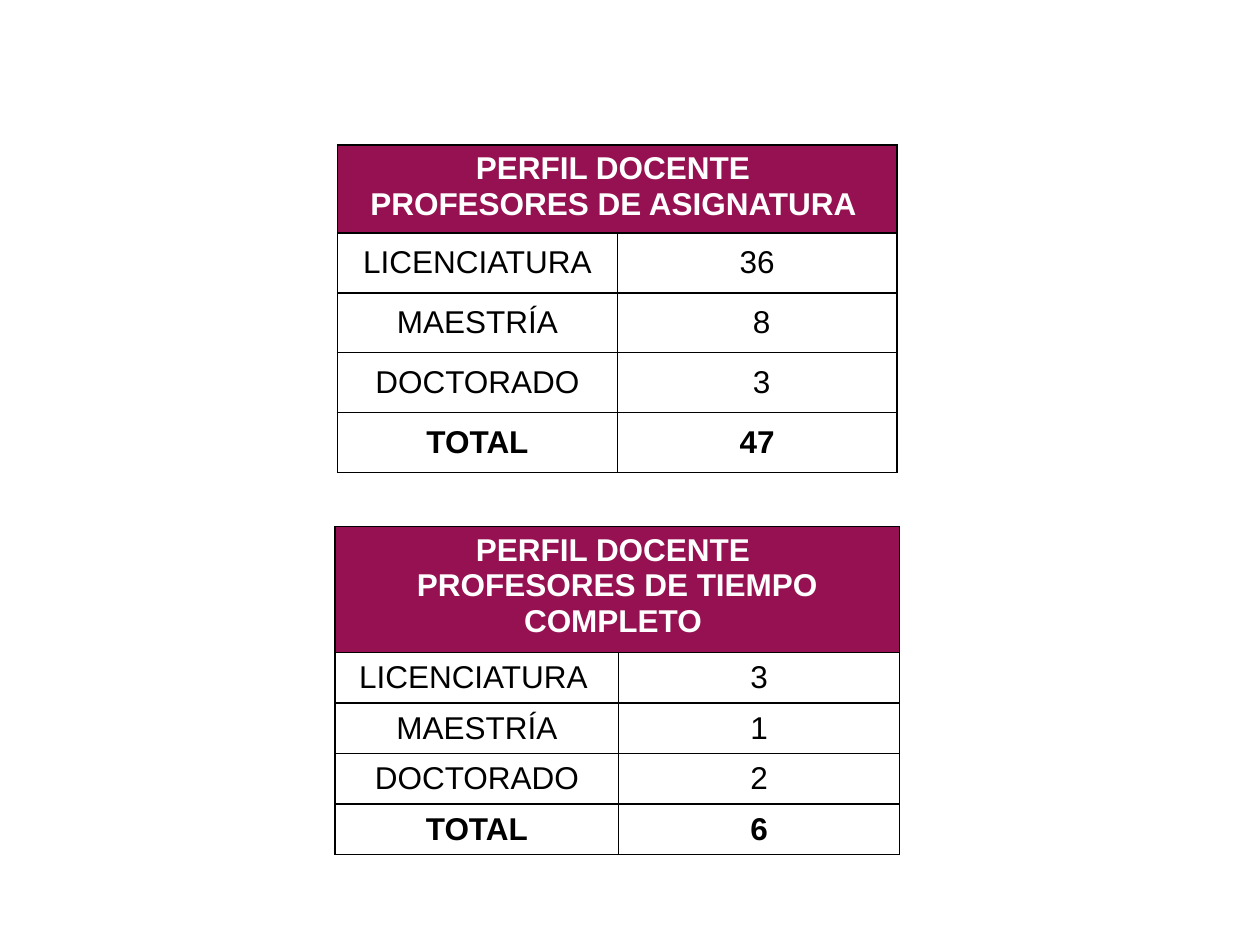
import lxml.etree
import pptx
import pptx.dml.color
import pptx.enum.text
import pptx.oxml.ns
import pptx.util

Inches = pptx.util.Inches

COLORS = {"header": "961151", "body": "FFFFFF", "light": "FFFFFF", "dark": "000000"}

TABLES = [
    {
        "heading": ["PERFIL DOCENTE ", "PROFESORES DE ASIGNATURA "],
        "rows": [("LICENCIATURA", "36"), ("MAESTRÍA", " 8"), ("DOCTORADO", " 3"), ("TOTAL", "47")],
        "left": 2.68, "top": 1.15, "columns": (2.22, 2.22),
        "header_height": 0.7, "row_height": 0.475,
    },
    {
        "heading": ["PERFIL DOCENTE ", "PROFESORES DE TIEMPO COMPLETO "],
        "rows": [("LICENCIATURA ", "3"), ("MAESTRÍA", "1"), ("DOCTORADO", "2"), ("TOTAL", "6")],
        "left": 2.66, "top": 4.18, "columns": (2.25, 2.23),
        "header_height": 1.0, "row_height": 0.4,
    },
]


def rgb(name):
    return pptx.dml.color.RGBColor.from_string(COLORS[name])


def add_borders(cell):
    """Draw a 1 pt line on each side; the lines must precede the fill."""
    properties = cell._tc.get_or_add_tcPr()
    qn = pptx.oxml.ns.qn
    for position, side in enumerate(("a:lnL", "a:lnR", "a:lnT", "a:lnB")):
        line = lxml.etree.Element(qn(side), w=str(pptx.util.Pt(1)))
        fill = lxml.etree.SubElement(line, qn("a:solidFill"))
        lxml.etree.SubElement(fill, qn("a:srgbClr"), val=COLORS["dark"])
        properties.insert(position, line)


def format_cell(cell, lines, fill, color, bold, anchor):
    cell.fill.solid()
    cell.fill.fore_color.rgb = rgb(fill)
    cell.vertical_anchor = anchor
    cell.text = "\n".join(lines)
    font_format = {"name": "Arial", "size": pptx.util.Pt(18), "bold": bold}
    for paragraph in cell.text_frame.paragraphs:
        paragraph.alignment = pptx.enum.text.PP_ALIGN.CENTER
        font = paragraph.runs[0].font
        for attribute, value in font_format.items():
            setattr(font, attribute, value)
        font.color.rgb = rgb(color)


def add_profile_table(slide, content):
    heights = [content["header_height"]] + [content["row_height"]] * len(content["rows"])
    widths = content["columns"]
    table = slide.shapes.add_table(
        len(heights), len(widths), Inches(content["left"]), Inches(content["top"]),
        Inches(sum(widths)), Inches(sum(heights)),
    ).table
    table.horz_banding = False
    for column, width in zip(table.columns, widths):
        column.width = Inches(width)
    for row, height in zip(table.rows, heights):
        row.height = Inches(height)

    anchors = pptx.enum.text.MSO_ANCHOR
    table.cell(0, 0).merge(table.cell(0, len(widths) - 1))
    format_cell(table.cell(0, 0), content["heading"], "header", "light", True, anchors.TOP)
    for row_index, values in enumerate(content["rows"], start=1):
        is_total = values[0] == "TOTAL"
        for column_index, value in enumerate(values):
            cell = table.cell(row_index, column_index)
            format_cell(cell, [value], "body", "dark", is_total, anchors.MIDDLE)
    for cell in table.iter_cells():
        add_borders(cell)


def main():
    presentation = pptx.Presentation()
    presentation.slide_width = Inches(10)
    presentation.slide_height = Inches(7.5)
    slide = presentation.slides.add_slide(presentation.slide_layouts[6])
    for content in TABLES:
        add_profile_table(slide, content)
    presentation.save("out.pptx")


if __name__ == "__main__":
    main()
